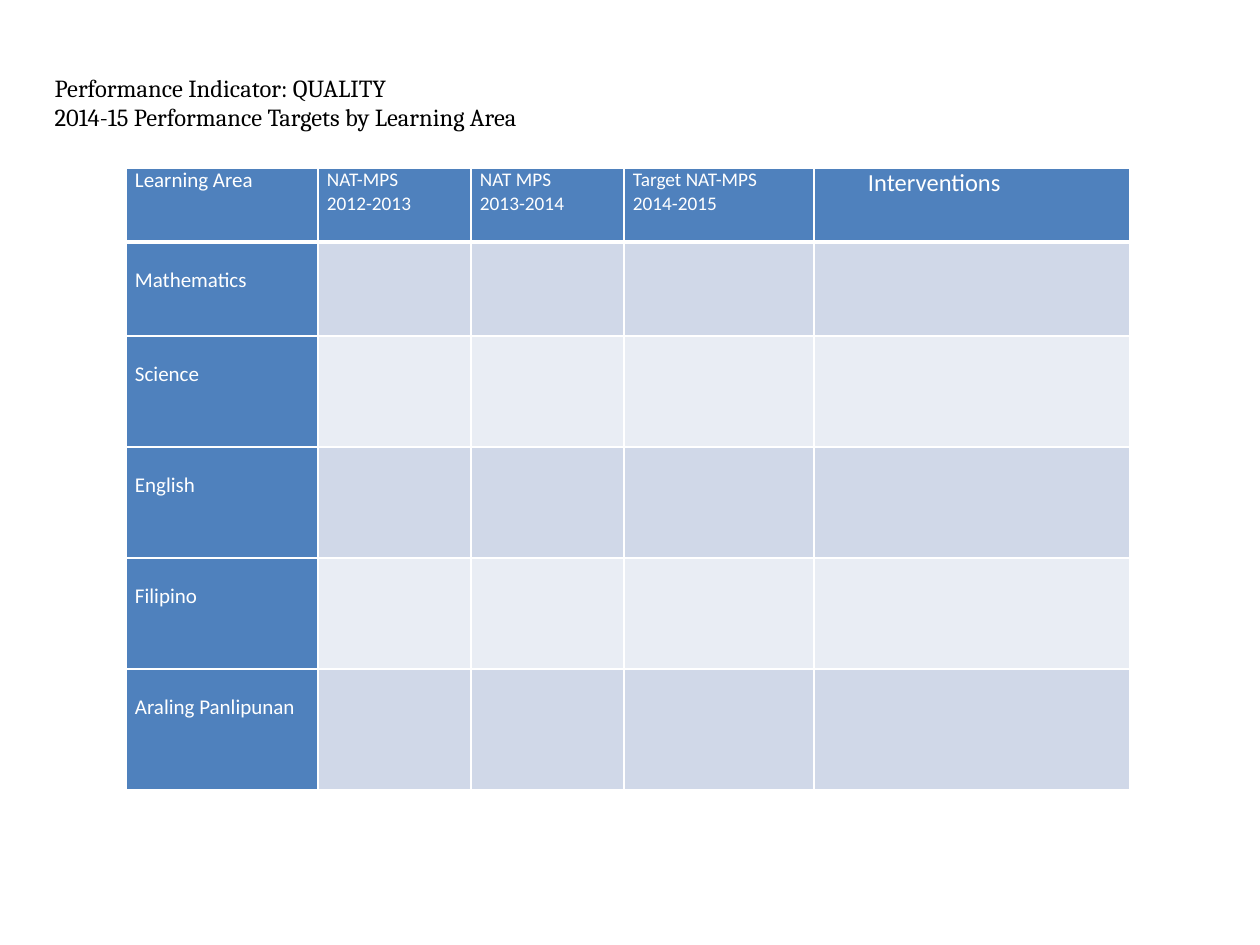
from lxml import etree
from pptx import Presentation
from pptx import util as u
from pptx.dml.color import RGBColor
from pptx.enum import text
from pptx.oxml import ns

WHITE = RGBColor(0xFF, 0xFF, 0xFF)
BLACK = RGBColor(0, 0, 0)
BLUE = RGBColor(0x4F, 0x81, 0xBD)
BANDS = [RGBColor(0xE9, 0xED, 0xF4), RGBColor(0xD0, 0xD8, 0xE8)]

PX = u.Inches(1) / 126

COLUMN_WIDTHS = [192, 153, 153, 190, 316]
ROW_HEIGHTS = [74, 94, 111, 111, 111, 121]
HEADERS = ["Learning Area", "NAT-MPS\n2012-2013", "NAT MPS\n2013-2014",
           "Target NAT-MPS\n2014-2015", "Interventions"]
HEADER_SIZES = [12, 11, 11, 11, 14]
SUBJECTS = ["Mathematics", "Science", "English", "Filipino", "Araling Panlipunan"]


def px(length):
    return u.Emu(round(length * PX))


def set_borders(cell, bottom_width):
    """Draw white 1 pt cell borders, with a chosen bottom width in points."""
    properties = cell._tc.get_or_add_tcPr()
    widths = {"a:lnL": 1, "a:lnR": 1, "a:lnT": 1, "a:lnB": bottom_width}
    for index, (tag, width) in enumerate(widths.items()):
        line = etree.Element(ns.qn(tag), w=str(u.Pt(width)))
        fill = etree.SubElement(line, ns.qn("a:solidFill"))
        etree.SubElement(fill, ns.qn("a:srgbClr"), val=str(WHITE))
        properties.insert(index, line)


presentation = Presentation()
presentation.slide_width = px(1260)
presentation.slide_height = px(945)
slide = presentation.slides.add_slide(presentation.slide_layouts[5])

# Title
title = slide.shapes.title
title.left, title.top, title.width, title.height = px(42), px(0), px(882), px(242)
frame = title.text_frame
frame.text = "Performance Indicator: QUALITY\n2014-15 Performance Targets by Learning Area"
frame_format = {"word_wrap": True, "auto_size": text.MSO_AUTO_SIZE.NONE,
                "vertical_anchor": text.MSO_ANCHOR.MIDDLE, "margin_bottom": px(44)}
for name, value in frame_format.items():
    setattr(frame, name, value)
for paragraph in frame.paragraphs:
    paragraph.alignment = text.PP_ALIGN.LEFT
    for name, value in {"name": "Cambria", "size": u.Pt(14)}.items():
        setattr(paragraph.font, name, value)
    paragraph.font.color.rgb = BLACK

# Targets table
table = slide.shapes.add_table(
    len(ROW_HEIGHTS), len(COLUMN_WIDTHS), px(126), px(168),
    px(sum(COLUMN_WIDTHS)), px(sum(ROW_HEIGHTS))).table
for column, width in zip(table.columns, COLUMN_WIDTHS):
    column.width = px(width)
for row, height in zip(table.rows, ROW_HEIGHTS):
    row.height = px(height)

for row_index in range(len(ROW_HEIGHTS)):
    for column_index in range(len(COLUMN_WIDTHS)):
        cell = table.cell(row_index, column_index)
        is_header = row_index == 0
        is_label = is_header or column_index == 0
        cell.fill.solid()
        cell.fill.fore_color.rgb = BLUE if is_label else BANDS[row_index % 2]
        set_borders(cell, 3 if is_header else 1)
        if not is_label:
            continue
        margins = {"margin_left": px(54 if column_index == 4 else 9),
                   "margin_right": px(9),
                   "margin_top": px(0 if is_header else 26),
                   "margin_bottom": px(0)}
        for name, value in margins.items():
            setattr(cell, name, value)
        cell.text = HEADERS[column_index] if is_header else SUBJECTS[row_index - 1]
        size = HEADER_SIZES[column_index] if is_header else 12
        for paragraph in cell.text_frame.paragraphs:
            for name, value in {"name": "Calibri", "size": u.Pt(size), "bold": False}.items():
                setattr(paragraph.font, name, value)
            paragraph.font.color.rgb = WHITE

presentation.save("out.pptx")
